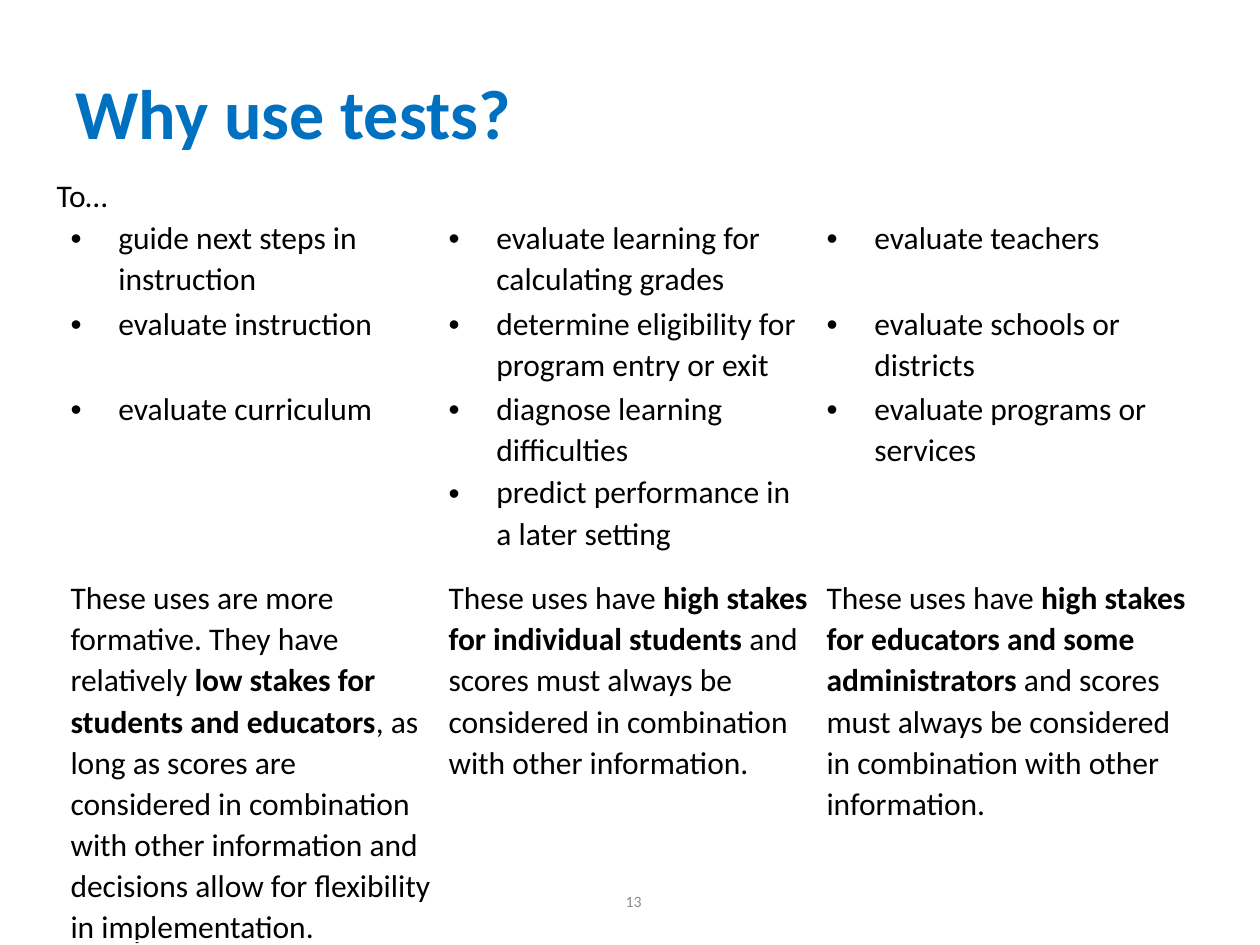
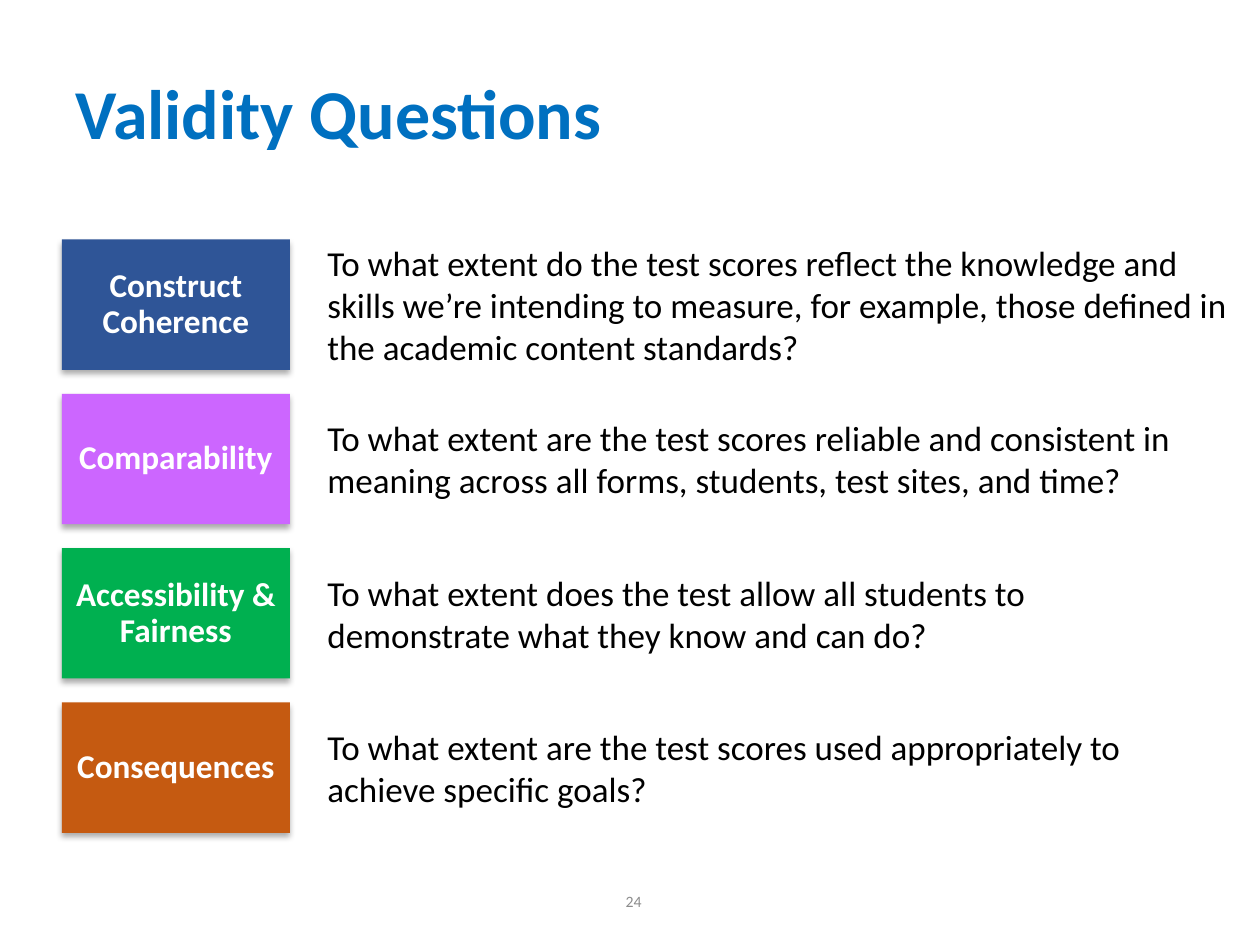
from lxml.etree import SubElement
from pptx import Presentation
from pptx.dml.color import RGBColor
from pptx.enum.shapes import MSO_SHAPE
from pptx.enum.text import MSO_ANCHOR, PP_ALIGN
from pptx.oxml.ns import qn
from pptx.util import Emu, Inches, Pt

COLUMNS, ROWS = 20, 15
BLUE, BLACK, WHITE, GREY = "0070C0", "000000", "FFFFFF", "8C8C8C"

USES = [
    ["guide next steps in instruction", "evaluate learning for calculating grades",
     "evaluate teachers"],
    ["evaluate instruction", "determine eligibility for program entry or exit",
     "evaluate schools or districts"],
    ["evaluate curriculum", "diagnose learning difficulties",
     "evaluate programs or services"],
    ["", "predict performance in a later setting", ""],
]
STAKES = [
    "These uses are more formative. They have relatively *low stakes for students and "
    "educators*, as long as scores are considered in combination with other information "
    "and decisions allow for flexibility in implementation.",
    "These uses have *high stakes for individual students *and scores must always be "
    "considered in combination with other information.",
    "These uses have *high stakes for educators and some administrators *and scores must "
    "always be considered in combination with other information.",
]
USE_ROWS = [1.36, 1.36, 1.32, 1.68, 5.68]

QUESTIONS = [
    ("Construct Coherence", "2F5597", 15, 2.22,
     "To what extent do the test scores reflect the knowledge and skills we’re intending "
     "to measure, for example, those defined in the academic content standards?"),
    ("Comparability", "CC66FF", 14.38, 1.54,
     "To what extent are the test scores reliable and consistent in meaning across all "
     "forms, students, test sites, and time?"),
    ("Accessibility & Fairness", "00B050", 14.02, 1.54,
     "To what extent does the test allow all students to demonstrate what they know and "
     "can do?"),
    ("Consequences", "C55A11", 14.26, 1.54,
     "To what extent are the test scores used appropriately to achieve specific goals?"),
]
LABEL_TOP, LABEL_HEIGHT, LABEL_PITCH = 3.8, 2.07, 2.45


def rgb(value):
    return RGBColor.from_string(value)


class Deck:
    """Holds the shared style and the current slide."""

    def __init__(self):
        self.prs = Presentation()
        self.prs.slide_width, self.prs.slide_height = Inches(10), Inches(7.5)
        self.slide = None

    def across(self, columns):
        return Emu(round(self.prs.slide_width * columns / COLUMNS))

    def down(self, rows):
        return Emu(round(self.prs.slide_height * rows / ROWS))

    def box(self, left, top, width, height):
        return self.across(left), self.down(top), self.across(width), self.down(height)

    def typeset(self, frame, text, size, color=BLACK, bold=None, align=PP_ALIGN.LEFT,
                spacing=None, bullet=False):
        paragraph = frame.paragraphs[0]
        for index, part in enumerate(text.split("*")):
            run = paragraph.add_run()
            run.text = part
            if index % 2:
                run.font.bold = True
        paragraph.alignment = align
        if spacing:
            paragraph.line_spacing = spacing
        if bullet:
            properties = paragraph._p.get_or_add_pPr()
            properties.set("marL", str(Inches(0.38)))
            properties.set("indent", str(Inches(-0.38)))
            SubElement(properties, qn("a:buFont"), typeface="Arial")
            SubElement(properties, qn("a:buChar"), char="•")
        font = paragraph.font
        font.name, font.size, font.bold = "Calibri", Pt(size), bold
        font.color.rgb = rgb(color)

    def start(self, title, number):
        self.slide = self.prs.slides.add_slide(self.prs.slide_layouts[5])
        heading = self.slide.shapes.title
        heading.left, heading.top, heading.width, heading.height = self.box(1, 0.6, 18, 2.5)
        heading.text_frame.vertical_anchor = MSO_ANCHOR.MIDDLE
        self.typeset(heading.text_frame, title, 40, BLUE, True, spacing=0.9)
        self.text(number, 5.88, 13.9, 4.5, 0.8, 9, GREY, PP_ALIGN.RIGHT)

    def text(self, words, left, top, width, height, size, color=BLACK,
             align=PP_ALIGN.LEFT):
        frame = self.slide.shapes.add_textbox(*self.box(left, top, width, height)).text_frame
        frame.word_wrap = True
        frame.vertical_anchor = MSO_ANCHOR.MIDDLE
        self.typeset(frame, words, size, color, align=align)

    def label(self, words, left, top, width, height, fill):
        block = self.slide.shapes.add_shape(MSO_SHAPE.RECTANGLE,
                                            *self.box(left, top, width, height))
        block.fill.solid()
        block.fill.fore_color.rgb = rgb(fill)
        block.line.fill.background()
        self.shade(block)
        frame = block.text_frame
        frame.margin_left = frame.margin_right = Inches(0.08)
        frame.margin_top = frame.margin_bottom = Inches(0.08)
        frame.word_wrap = True
        frame.vertical_anchor = MSO_ANCHOR.MIDDLE
        self.typeset(frame, words, 19, WHITE, True, PP_ALIGN.CENTER, 0.9)

    def shade(self, block):
        block.shadow.inherit = False
        effects = block._element.spPr.find(qn("a:effectLst"))
        shadow = SubElement(effects, qn("a:outerShdw"), blurRad=str(Pt(3.5)),
                            dist=str(Pt(2.2)), dir="5400000", rotWithShape="0")
        color = SubElement(shadow, qn("a:srgbClr"), val=BLACK)
        SubElement(color, qn("a:alpha"), val="32000")

    def table(self, left, top, width, heights, content):
        grid = self.slide.shapes.add_table(
            len(content), len(content[0]), *self.box(left, top, width, sum(heights))).table
        grid.first_row = grid.horz_banding = False
        for row, height in zip(grid.rows, heights):
            row.height = self.down(height)
        for r, line in enumerate(content):
            for c, words in enumerate(line):
                cell = grid.cell(r, c)
                cell.fill.background()
                cell.margin_left = cell.margin_right = Inches(0.06)
                cell.margin_top = cell.margin_bottom = 0
                if words:
                    self.typeset(cell.text_frame, words, 18, spacing=1.07,
                                 bullet=r < len(content) - 1)


def main():
    deck = Deck()

    deck.start("Why use tests?", "13")
    deck.table(1, 3.44, 18, USE_ROWS, USES + [STAKES])
    deck.text("To…", 0.7, 2.7, 1.5, 0.8, 18)

    deck.start("Validity Questions", "24")
    for index, (aspect, fill, width, height, question) in enumerate(QUESTIONS):
        top = LABEL_TOP + index * LABEL_PITCH
        deck.label(aspect, 0.98, top, 3.62, LABEL_HEIGHT, fill)
        deck.text(question, 5, top + (LABEL_HEIGHT - height) / 2, width, height, 20)

    deck.prs.save("out.pptx")


if __name__ == "__main__":
    main()
